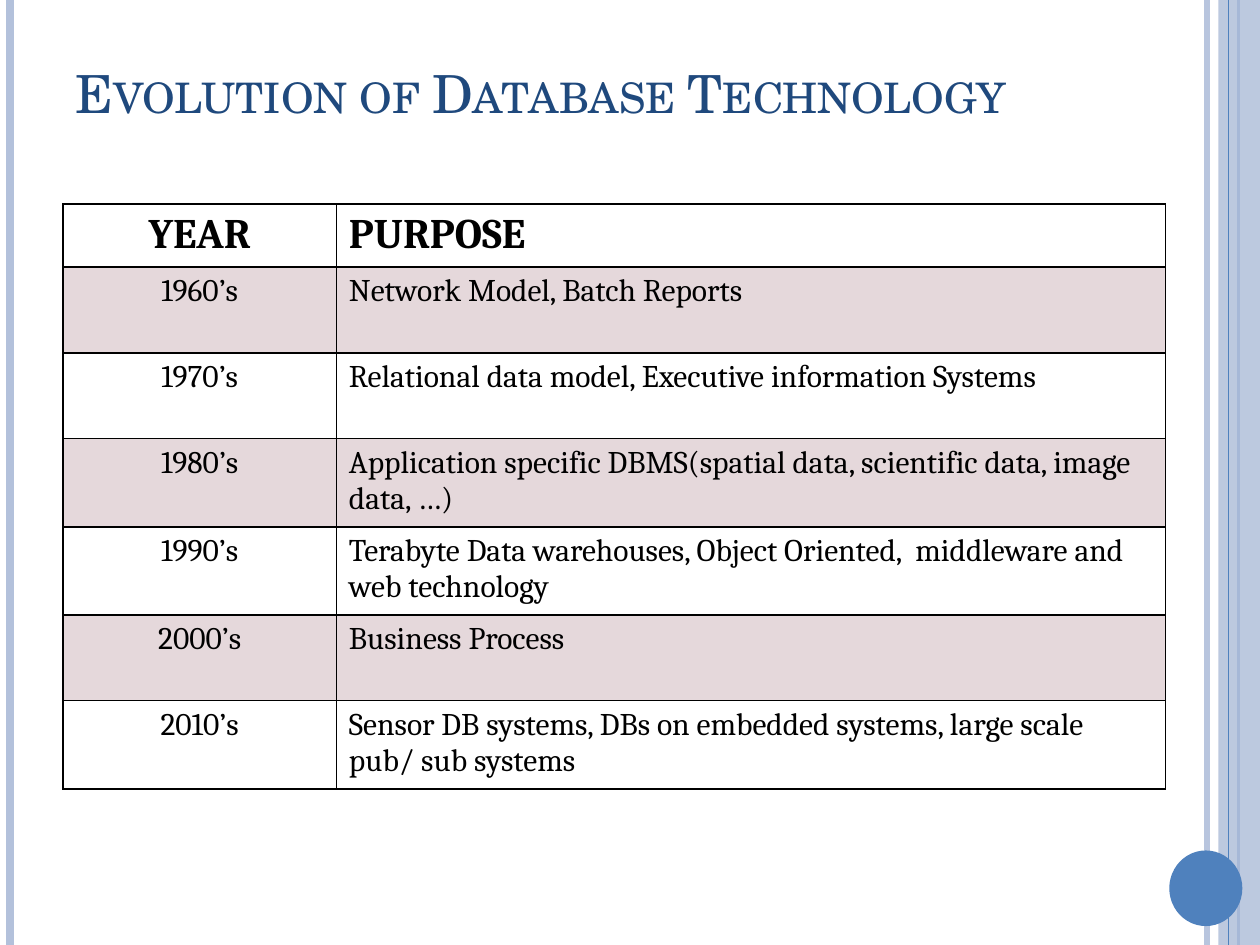
from dataclasses import dataclass

from lxml import etree
from pptx import Presentation
from pptx.dml.color import RGBColor
from pptx.enum import shapes, text
from pptx.oxml.ns import qn
from pptx.util import Inches, Pt


@dataclass(frozen=True)
class Theme:
    accent: str = "4F81BD"
    pale: str = "B3C1DB"
    paler: str = "B8C5DE"
    title: str = "1F497D"
    ink: str = "000000"
    band: str = "E5D8DB"
    title_font: str = "TeX Gyre Schola"
    body_font: str = "Cambria"
    title_size: int = 30
    header_size: int = 24
    body_size: int = 18


THEME = Theme()
HEADER = ("YEAR", "PURPOSE")
DECADES = [
    ("1960’s", "Network Model, Batch Reports"),
    ("1970’s", "Relational data model, Executive information Systems"),
    ("1980’s", "Application specific DBMS(spatial data, scientific data, image  data, …)"),
    ("1990’s", "Terabyte Data warehouses, Object Oriented,  middleware and web technology"),
    ("2000’s", "Business Process"),
    ("2010’s", "Sensor DB systems, DBs on embedded systems, large scale pub/ sub systems"),
]


def paint(fill, color):
    fill.solid()
    fill.fore_color.rgb = RGBColor.from_string(color)


def add_run(p, words, font, size, color, bold=False):
    r = p.add_run()
    r.text = words
    r.font.name = font
    r.font.size = Pt(size)
    r.font.bold = bold
    r.font.color.rgb = RGBColor.from_string(color)
    return r


def add_rule(slide, x, top, height, color, width):
    line = slide.shapes.add_connector(
        shapes.MSO_CONNECTOR.STRAIGHT,
        Inches(x), Inches(top), Inches(x), Inches(top + height))
    line.line.width = Pt(width)
    paint(line.line.fill, color)
    etree.SubElement(line._element.spPr, qn("a:effectLst"))


def add_solid(slide, kind, box, color):
    sp = slide.shapes.add_shape(kind, *map(Inches, box))
    sp.shadow.inherit = False
    paint(sp.fill, color)
    sp.line.fill.background()
    return sp


def add_frame(slide, box):
    left, top, width, height = box
    right = left + width
    add_rule(slide, right - 0.42, top, height, THEME.paler, 3)
    add_rule(slide, left + 0.08, top, height, THEME.pale, 4.5)
    add_rule(slide, right - 0.17, top, height, THEME.accent, 1.5)
    strip = add_solid(slide, shapes.MSO_SHAPE.RECTANGLE,
                      (right - 0.33, top, 0.33, height), THEME.pale)
    color = strip._element.spPr.find(qn("a:solidFill")).find(qn("a:srgbClr"))
    etree.SubElement(color, qn("a:alpha")).set("val", "87000")
    add_rule(slide, right - 0.25, top, height, THEME.accent, 0.75)
    add_solid(slide, shapes.MSO_SHAPE.OVAL,
              (right - 0.72, top + height - 0.75, 0.58, 0.6), THEME.accent)


def add_title(slide, box, words):
    tf = slide.shapes.add_textbox(*map(Inches, box)).text_frame
    tf.word_wrap = True
    tf.vertical_anchor = text.MSO_ANCHOR.MIDDLE
    r = add_run(tf.paragraphs[0], words, THEME.title_font,
                THEME.title_size, THEME.title)
    r.font._element.set("cap", "small")


def add_timeline(slide, box, header, decades):
    rows = [header, *decades]
    frame = slide.shapes.add_table(len(rows), len(header), *map(Inches, box))
    table = frame.table
    table.first_row = False
    table.horz_banding = False
    properties = table._tbl.tblPr
    properties.remove(properties.find(qn("a:tableStyleId")))
    year_width, header_height, row_height = 2.17, 0.41, 0.68
    table.columns[0].width = Inches(year_width)
    table.columns[1].width = Inches(box[2] - year_width)
    for i, row in enumerate(rows):
        is_header = i == 0
        table.rows[i].height = Inches(header_height if is_header else row_height)
        size = THEME.header_size if is_header else THEME.body_size
        for j, words in enumerate(row):
            cell = table.cell(i, j)
            if i % 2:
                paint(cell.fill, THEME.band)
            else:
                cell.fill.background()
            p = cell.text_frame.paragraphs[0]
            p.alignment = text.PP_ALIGN.LEFT if j else text.PP_ALIGN.CENTER
            add_run(p, words, THEME.body_font, size, THEME.ink, is_header)


def main():
    prs = Presentation()
    prs.slide_width, prs.slide_height = Inches(10), Inches(7.5)
    slide = prs.slides.add_slide(prs.slide_layouts[6])
    add_frame(slide, (0, 0, 10, 7.5))
    add_title(slide, (0.5, 0.3, 8.67, 0.87), "Evolution of Database Technology")
    add_timeline(slide, (0.5, 1.62, 8.75, 4.49), HEADER, DECADES)
    prs.save("out.pptx")


if __name__ == "__main__":
    main()
